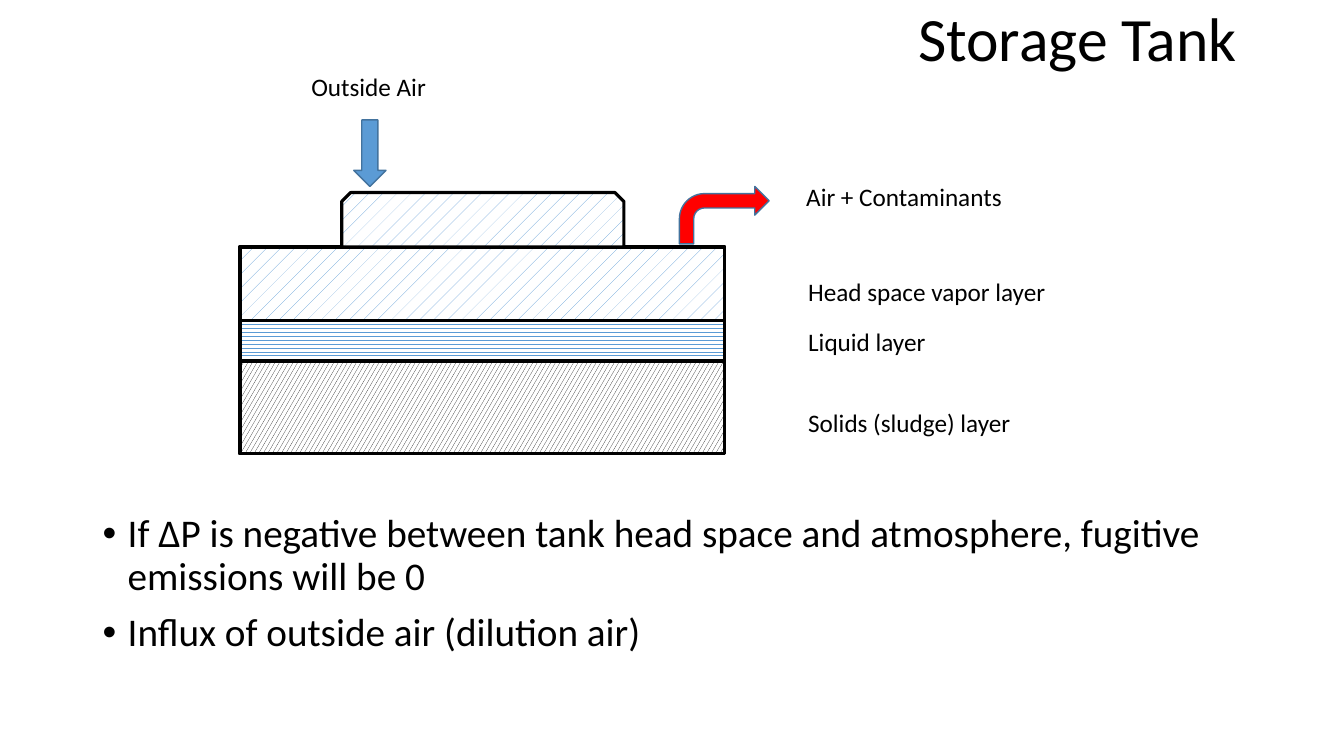
"""Build the storage tank slide with its layers, air flows and notes."""
from dataclasses import dataclass
from typing import Optional

from lxml import etree
from pptx import Presentation
from pptx.dml.color import RGBColor
from pptx.enum import dml, shapes, text
from pptx.oxml import ns
from pptx.util import Pt

BLACK = RGBColor(0x00, 0x00, 0x00)
WHITE = RGBColor(0xFF, 0xFF, 0xFF)
RED = RGBColor(0xFF, 0x00, 0x00)
BLUE = RGBColor(0x5B, 0x9B, 0xD5)
ARROW_EDGE = RGBColor(0x43, 0x73, 0x9E)
FONT = "Calibri"

TANK_LEFT, TANK_TOP, TANK_WIDTH = 171.4, 176.4, 346.3
LID_LEFT, LID_WIDTH, LID_HEIGHT = 244.1, 201.6, 38.9
LABEL_HEIGHT = 29.1

Pattern = dml.MSO_PATTERN
Anchor = text.MSO_ANCHOR
Preset = shapes.MSO_SHAPE


@dataclass
class Layer:
    height: float
    pattern: Pattern
    color: RGBColor


@dataclass
class Arrow:
    preset: Preset
    left: float
    top: float
    width: float
    height: float
    color: RGBColor


@dataclass
class Label:
    words: str
    left: float
    top: float
    width: float
    anchor: Anchor = Anchor.TOP


LAYERS = [
    Layer(52.4, Pattern.PERCENT_5, BLUE),
    Layer(29, Pattern.WAVE, BLUE),
    Layer(66.2, Pattern.LARGE_CONFETTI, BLACK),
]
ARROWS = [
    Arrow(Preset.DOWN_ARROW, 252.7, 85.7, 23, 47.5, BLUE),
    Arrow(Preset.BENT_ARROW, 485.3, 133.2, 64.1, 41, RED),
]
LABELS = [
    Label("Solids (sludge) layer", 570.2, 287.3, 160.6, Anchor.MIDDLE),
    Label("Liquid layer", 570.2, 229, 99.4, Anchor.MIDDLE),
    Label("Head space vapor layer", 570.2, 193.7, 185.8, Anchor.MIDDLE),
    Label("Outside Air", 215.3, 47.5, 97.2),
    Label("Air + Contaminants", 568.8, 126, 155.5),
]
NOTES = [
    "If ΔP is negative between tank head space and atmosphere, fugitive emissions will be 0",
    "Influx of outside air (dilution air)",
]


def format_paragraph(paragraph, size: float) -> None:
    for run in paragraph.runs:
        run.font.name = FONT
        run.font.size = Pt(size)
        run.font.color.rgb = BLACK


def add_part(slide, preset: Preset, left: float, top: float, width: float, height: float,
             edge: RGBColor = BLACK, edge_width: float = 2.25):
    part = slide.shapes.add_shape(preset, Pt(left), Pt(top), Pt(width), Pt(height))
    part.shadow.inherit = False
    part.line.color.rgb = edge
    part.line.width = Pt(edge_width)
    return part


def fill_pattern(part, pattern: Pattern, color: RGBColor) -> None:
    part.fill.patterned()
    part.fill.pattern = pattern
    part.fill.fore_color.rgb = color
    part.fill.back_color.rgb = WHITE


def add_tank(slide) -> None:
    wall = add_part(slide, Preset.RECTANGLE, TANK_LEFT, TANK_TOP, TANK_WIDTH,
                    sum(layer.height for layer in LAYERS))
    wall.fill.background()
    bottom = wall.top.pt + wall.height.pt
    for layer in reversed(LAYERS):
        bottom -= layer.height
        band = add_part(slide, Preset.RECTANGLE, TANK_LEFT, bottom, TANK_WIDTH, layer.height)
        fill_pattern(band, layer.pattern, layer.color)
    lid = add_part(slide, Preset.SNIP_2_SAME_RECTANGLE, LID_LEFT, TANK_TOP - LID_HEIGHT,
                   LID_WIDTH, LID_HEIGHT)
    fill_pattern(lid, Pattern.PERCENT_5, BLUE)


def add_arrow(slide, arrow: Arrow) -> None:
    flow = add_part(slide, arrow.preset, arrow.left, arrow.top, arrow.width, arrow.height,
                    ARROW_EDGE, 1)
    flow.fill.solid()
    flow.fill.fore_color.rgb = arrow.color


def add_label(slide, label: Label) -> None:
    frame = slide.shapes.add_textbox(Pt(label.left), Pt(label.top), Pt(label.width),
                                     Pt(LABEL_HEIGHT)).text_frame
    frame.word_wrap = False
    frame.auto_size = text.MSO_AUTO_SIZE.SHAPE_TO_FIT_TEXT
    frame.vertical_anchor = label.anchor
    frame.text = label.words
    format_paragraph(frame.paragraphs[0], 18)


def add_title(slide) -> None:
    title = slide.shapes.title
    title.left, title.top, title.width, title.height = Pt(355.7), Pt(-22.3), Pt(828), Pt(104.4)
    frame = title.text_frame
    frame.text = "Storage Tank"
    frame.auto_size = text.MSO_AUTO_SIZE.NONE
    frame.vertical_anchor = Anchor.MIDDLE
    heading = frame.paragraphs[0]
    heading.alignment = text.PP_ALIGN.CENTER
    heading.line_spacing = 0.9
    format_paragraph(heading, 44)


def add_notes(slide) -> None:
    frame = slide.shapes.add_textbox(Pt(66.2), Pt(363.6), Pt(828), Pt(122.4)).text_frame
    frame.word_wrap = True
    frame.text = "\n".join(NOTES)
    for note in frame.paragraphs:
        note.line_spacing = 0.9
        note.space_before = Pt(10)
        format_paragraph(note, 28)
        properties = note._p.get_or_add_pPr()
        properties.set("marL", str(Pt(18)))
        properties.set("indent", str(Pt(-18)))
        etree.SubElement(properties, ns.qn("a:buFont"), typeface="Arial")
        etree.SubElement(properties, ns.qn("a:buChar"), char="•")


def main() -> None:
    deck = Presentation()
    deck.slide_width, deck.slide_height = Pt(960), Pt(540)
    slide = deck.slides.add_slide(deck.slide_layouts[5])
    add_tank(slide)
    add_title(slide)
    add_notes(slide)
    for arrow in ARROWS:
        add_arrow(slide, arrow)
    for label in LABELS:
        add_label(slide, label)
    deck.save("out.pptx")


if __name__ == "__main__":
    main()
